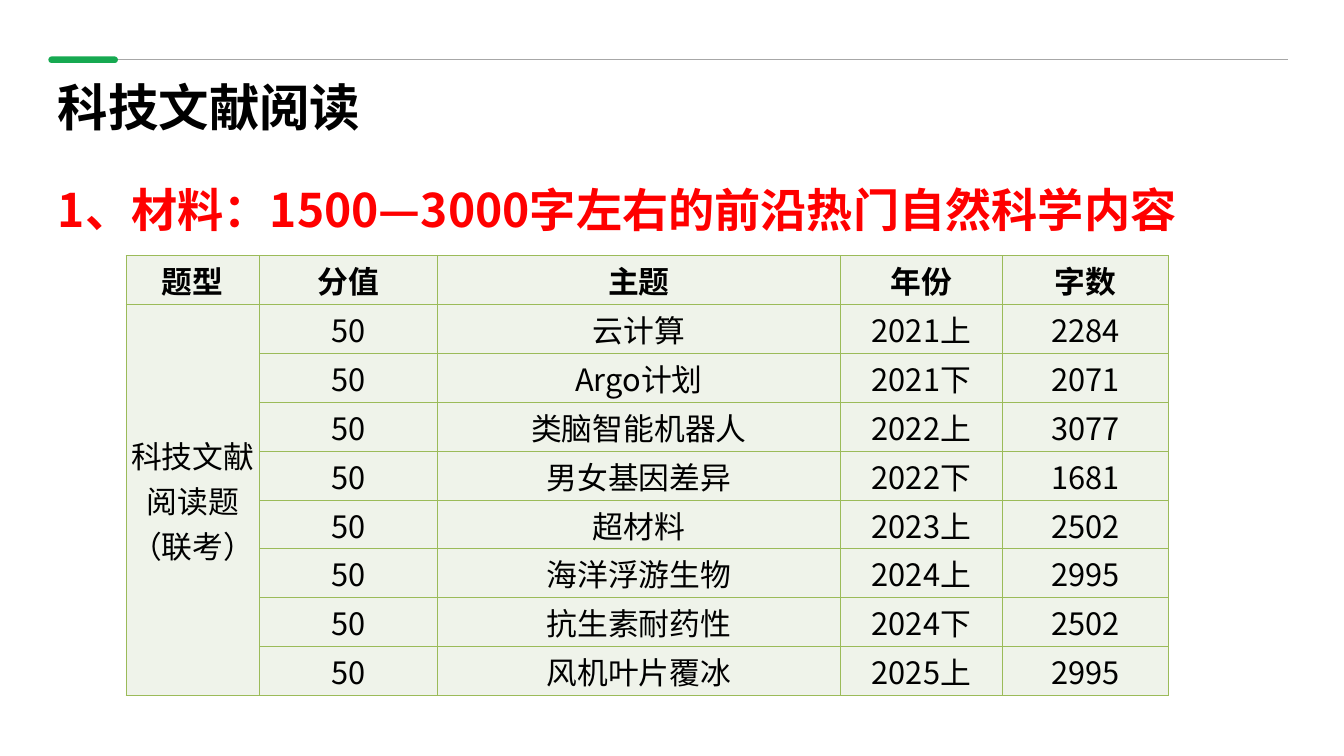
from dataclasses import dataclass
from typing import NamedTuple

from lxml.etree import SubElement
from pptx import Presentation
from pptx.dml.color import RGBColor
from pptx.enum.shapes import MSO_CONNECTOR, MSO_SHAPE
from pptx.enum.text import MSO_ANCHOR, MSO_AUTO_SIZE, PP_ALIGN
from pptx.oxml import parse_xml
from pptx.oxml.ns import nsdecls, qn
from pptx.util import Inches, Pt

FONT = "Noto Sans CJK SC"
GREEN, RULE_GREY = "16A951", "A7A7A7"
CELL_FILL, CELL_BORDER = "EFF3EA", "9BBB59"


@dataclass
class TextStyle:
    size: float
    color: str = "000000"
    bold: bool = True
    align: PP_ALIGN = PP_ALIGN.LEFT
    spacing: float = 1.0


class Passage(NamedTuple):
    topic: str
    year: str
    words: str


TITLE = TextStyle(72)
SUBTITLE = TextStyle(66, "FF0000", align=PP_ALIGN.JUSTIFY, spacing=1.5)
HEADER = TextStyle(44, align=PP_ALIGN.CENTER)
BODY = TextStyle(44, bold=False, align=PP_ALIGN.CENTER)

HEADINGS = ("题型", "分值", "主题", "年份", "字数")
QUESTION_TYPE = "科技文献\n阅读题\n（联考）"
SCORE = "50"
PASSAGES = [
    Passage("云计算", "2021上", "2284"),
    Passage("Argo计划", "2021下", "2071"),
    Passage("类脑智能机器人", "2022上", "3077"),
    Passage("男女基因差异", "2022下", "1681"),
    Passage("超材料", "2023上", "2502"),
    Passage("海洋浮游生物", "2024上", "2995"),
    Passage("抗生素耐药性", "2024下", "2502"),
    Passage("风机叶片覆冰", "2025上", "2995"),
]
COL_WIDTHS = (2.65, 3.53, 8, 3.21, 3.29)
ROW_HEIGHT = 0.97


def rgb(color: str) -> RGBColor:
    return RGBColor.from_string(color)


def write(tf, text: str, style: TextStyle) -> None:
    tf.text = text
    for p in tf.paragraphs:
        p.alignment = style.align
        p.line_spacing = style.spacing
        p.space_before = Pt(0)
        for r in p.runs:
            r.font.name = FONT
            r.font.size = Pt(style.size)
            r.font.bold = style.bold
            r.font.color.rgb = rgb(style.color)
            SubElement(r.font._element, qn("a:ea"), typeface=FONT)


def place_text(sp, box: tuple, text: str, style: TextStyle) -> None:
    sp.left, sp.top, sp.width, sp.height = map(Inches, box)
    tf = sp.text_frame
    tf.word_wrap = True
    tf.auto_size = MSO_AUTO_SIZE.SHAPE_TO_FIT_TEXT
    tf.vertical_anchor = MSO_ANCHOR.TOP
    write(tf, text, style)


def format_cell(cell) -> None:
    """Set the fill, margins, anchor and four borders of a cell."""
    cell.fill.solid()
    cell.fill.fore_color.rgb = rgb(CELL_FILL)
    cell.vertical_anchor = MSO_ANCHOR.MIDDLE
    cell.margin_left = cell.margin_top = cell.margin_right = Inches(0.01)
    cell.margin_bottom = 0
    tc_pr = cell._tc.get_or_add_tcPr()
    for i, side in enumerate(("lnL", "lnR", "lnT", "lnB")):
        tc_pr.insert(i, parse_xml(
            f'<a:{side} {nsdecls("a")} w="{Pt(1)}"><a:solidFill>'
            f'<a:srgbClr val="{CELL_BORDER}"/></a:solidFill></a:{side}>'))


def add_header_rule(s) -> None:
    line = s.shapes.add_connector(
        MSO_CONNECTOR.STRAIGHT, Inches(1.83), Inches(1.18), Inches(25.55), Inches(1.18))
    line.line.color.rgb = rgb(RULE_GREY)
    line.line.width = Pt(2.25)
    SubElement(line._element.spPr, qn("a:effectLst"))
    accent = s.shapes.add_shape(
        MSO_SHAPE.ROUNDED_RECTANGLE, Inches(0.96), Inches(1.12), Inches(1.38), Inches(0.13))
    accent.adjustments[0] = 0.5
    accent.shadow.inherit = False
    accent.fill.solid()
    accent.fill.fore_color.rgb = rgb(GREEN)
    accent.line.fill.background()


def add_passage_table(s) -> None:
    rows = [HEADINGS] + [("", SCORE, *passage) for passage in PASSAGES]
    table = s.shapes.add_table(
        len(rows), len(HEADINGS), Inches(2.5), Inches(5.07),
        Inches(sum(COL_WIDTHS)), Inches(ROW_HEIGHT * len(rows))).table
    for column, width in zip(table.columns, COL_WIDTHS):
        column.width = Inches(width)
    for row in table.rows:
        row.height = Inches(ROW_HEIGHT)
    for i, values in enumerate(rows):
        for j, value in enumerate(values):
            cell = table.cell(i, j)
            format_cell(cell)
            if value:
                write(cell.text_frame, value, BODY if i else HEADER)
    question_type = table.cell(1, 0)
    question_type.merge(table.cell(len(rows) - 1, 0))
    write(question_type.text_frame, QUESTION_TYPE, BODY)


def main() -> None:
    prs = Presentation()
    prs.slide_width, prs.slide_height = Inches(26.67), Inches(15)
    s = prs.slides.add_slide(prs.slide_layouts[5])
    add_header_rule(s)
    place_text(s.shapes.title, (1.05, 1.45, 12.06, 1.31), "科技文献阅读", TITLE)
    place_text(s.shapes.add_textbox(0, 0, 0, 0), (1.05, 3, 25.27, 3.38),
               "1、材料：1500—3000字左右的前沿热门自然科学内容", SUBTITLE)
    add_passage_table(s)
    prs.save("out.pptx")


if __name__ == "__main__":
    main()
